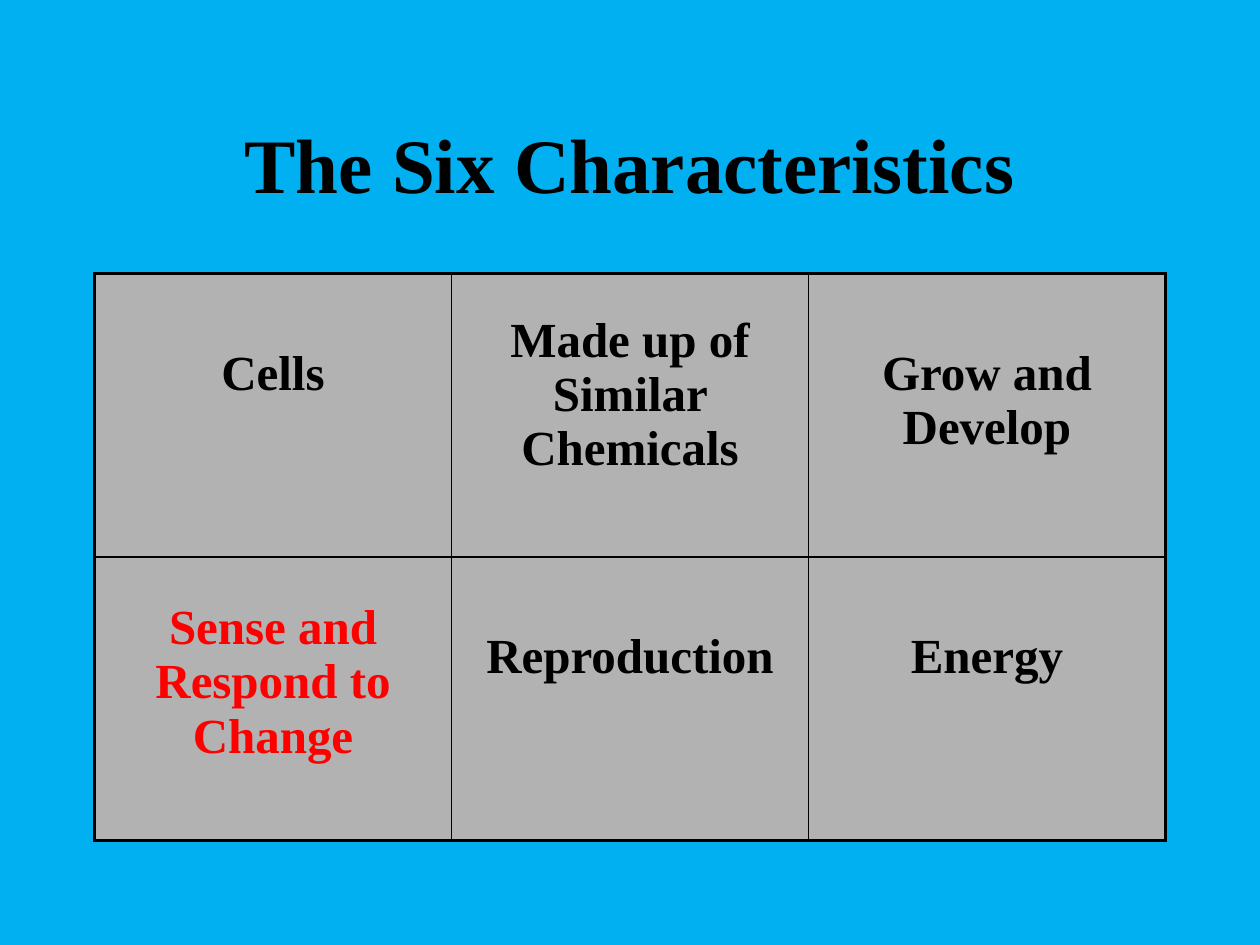
from lxml import etree
from pptx import Presentation
from pptx.dml.color import RGBColor
from pptx.enum.text import MSO_ANCHOR, PP_ALIGN
from pptx.oxml.ns import qn
from pptx.util import Inches, Pt

CENTER = PP_ALIGN.CENTER
MIDDLE = MSO_ANCHOR.MIDDLE
BLACK, RED, GRAY, SKY = "000000", "FF0000", "B2B2B2", "00B0F0"
OUTER, INNER = 2.25, 1
TITLE_ONLY = 5

CHARACTERISTICS = [
    [("Cells", 0.58, BLACK), ("Made up of Similar Chemicals", 0.32, BLACK),
     ("Grow and Develop", 0.58, BLACK)],
    [("Sense and Respond to Change", 0.35, RED), ("Reproduction", 0.58, BLACK),
     ("Energy", 0.58, BLACK)],
]


def color(hex_value):
    return RGBColor.from_string(hex_value)


class SlideBuilder:
    """Holds the text style and the current slide."""

    def __init__(self, slide, font="Times New Roman"):
        self.slide = slide
        self.font = font

    def background(self, hex_value):
        fill = self.slide.background.fill
        fill.solid()
        fill.fore_color.rgb = color(hex_value)

    def label(self, frame, text, size, hex_value):
        frame.word_wrap = True
        paragraph = frame.paragraphs[0]
        paragraph.alignment = CENTER
        run = paragraph.add_run()
        run.text = text
        style = {"name": self.font, "size": Pt(size), "bold": True}
        for attribute, value in style.items():
            setattr(run.font, attribute, value)
        run.font.color.rgb = color(hex_value)

    def title(self, text, left, top, width, height):
        heading = self.slide.shapes.title
        place = {"left": left, "top": top, "width": width, "height": height}
        for attribute, value in place.items():
            setattr(heading, attribute, Inches(value))
        heading.text_frame.vertical_anchor = MIDDLE
        self.label(heading.text_frame, text, 44, BLACK)

    def borders(self, cell, widths):
        properties = cell._tc.get_or_add_tcPr()
        for position, (side, width) in enumerate(widths.items()):
            line = etree.Element(qn(f"a:ln{side}"), w=str(Pt(width)))
            fill = etree.SubElement(line, qn("a:solidFill"))
            etree.SubElement(fill, qn("a:srgbClr"), val=BLACK)
            properties.insert(position, line)

    def table(self, rows, left, top, width, height):
        last_row, last_column = len(rows) - 1, len(rows[0]) - 1
        grid = self.slide.shapes.add_table(
            len(rows), len(rows[0]),
            Inches(left), Inches(top), Inches(width), Inches(height)).table
        for r, row in enumerate(rows):
            for c, (text, gap, hex_value) in enumerate(row):
                cell = grid.cell(r, c)
                cell.fill.solid()
                cell.fill.fore_color.rgb = color(GRAY)
                cell.margin_top = Inches(gap)
                self.label(cell.text_frame, text, 28, hex_value)
                self.borders(cell, {
                    "L": OUTER if c == 0 else INNER,
                    "R": OUTER if c == last_column else INNER,
                    "T": OUTER if r == 0 else INNER,
                    "B": OUTER if r == last_row else INNER,
                })


def main():
    presentation = Presentation()
    presentation.slide_width = Inches(10)
    presentation.slide_height = Inches(7.5)
    layout = presentation.slide_layouts[TITLE_ONLY]
    builder = SlideBuilder(presentation.slides.add_slide(layout))
    builder.background(SKY)
    builder.title("The Six Characteristics", 0.75, 0.67, 8.5, 1.25)
    builder.table(CHARACTERISTICS, 0.75, 2.17, 8.5, 4.5)
    presentation.save("out.pptx")


if __name__ == "__main__":
    main()
